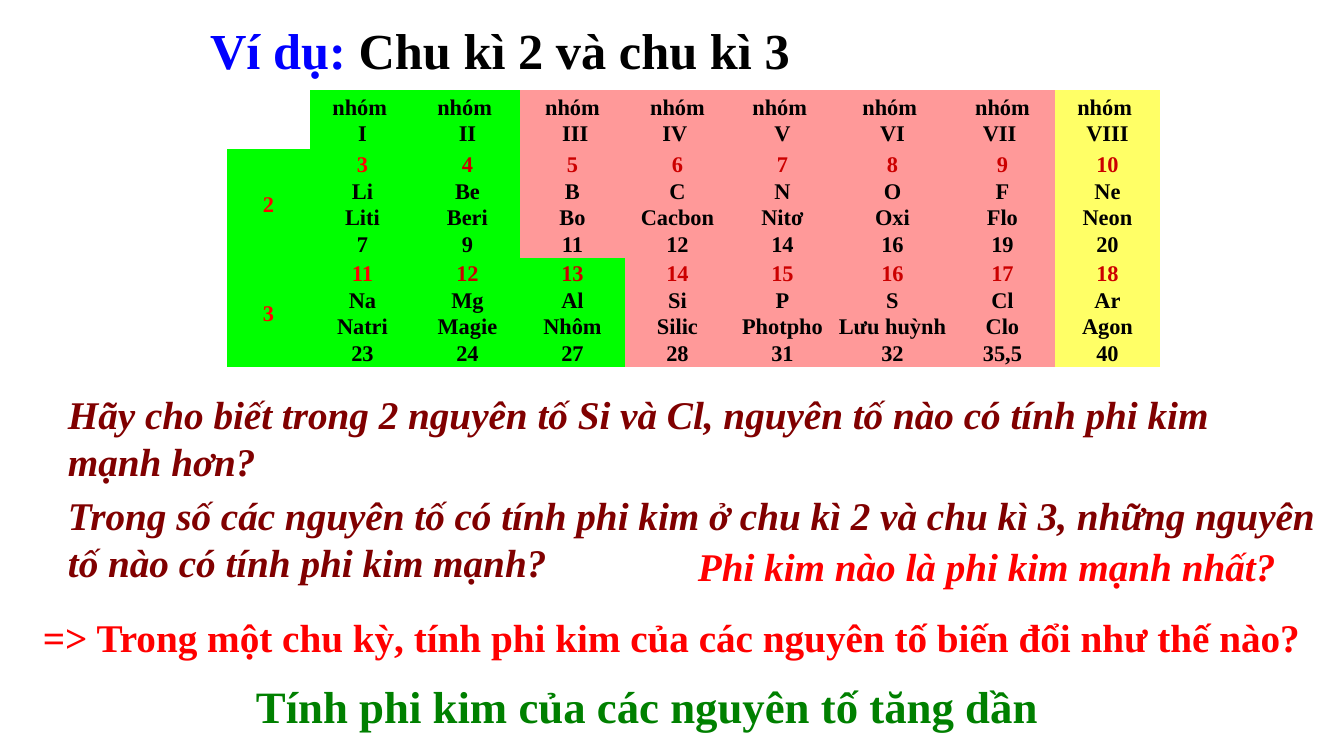
from dataclasses import dataclass
from itertools import accumulate

import pptx
import pptx.dml.color
import pptx.enum.shapes
import pptx.enum.text
import pptx.util

EMU_PER_PX = 914400 / 100.8


@dataclass(frozen=True)
class Theme:
    font: str = "Times New Roman"
    black: str = "000000"
    blue: str = "0000FF"
    red: str = "FF0000"
    dark_red: str = "CC0000"
    maroon: str = "800000"
    dark_green: str = "008000"
    metal: str = "00FF00"
    nonmetal: str = "FF9999"
    noble_gas: str = "FFFF66"
    title_pt: int = 36
    question_pt: int = 28
    answer_pt: int = 32
    cell_pt: int = 16


@dataclass(frozen=True)
class Box:
    left: int
    top: int
    width: int
    height: int


@dataclass(frozen=True)
class Statement:
    box: Box
    text: str
    color: str
    size: int
    italic: bool = False


@dataclass(frozen=True)
class Cell:
    row: int
    column: int
    text: str
    fill: str
    first_line_color: str


THEME = Theme()

# Heading and questions
HEADING_BOX = Box(200, 14, 834, 71)
HEADING_LABEL, HEADING_TOPIC = "Ví dụ: ", "Chu kì 2 và chu kì 3"
STATEMENTS = [
    Statement(Box(58, 385, 1217, 104),
              "Hãy cho biết trong 2 nguyên tố Si và Cl, nguyên tố nào có tính phi kim mạnh hơn?",
              THEME.maroon, THEME.question_pt, italic=True),
    Statement(Box(688, 537, 789, 57), "Phi kim nào là phi kim mạnh nhất?",
              THEME.red, THEME.question_pt, italic=True),
    Statement(Box(58, 486, 1268, 105),
              "Trong số các nguyên tố có tính phi kim ở chu kì 2 và chu kì 3, "
              "những nguyên tố nào có tính phi kim mạnh?",
              THEME.maroon, THEME.question_pt, italic=True),
    Statement(Box(33, 608, 1347, 57),
              "=> Trong một chu kỳ, tính phi kim của các nguyên tố biến đổi như thế nào?",
              THEME.red, THEME.question_pt),
    Statement(Box(246, 674, 920, 65), "Tính phi kim của các nguyên tố tăng dần",
              THEME.dark_green, THEME.answer_pt),
]

# Periodic grid: column 0 holds the period, row 0 the group
COLUMN_WIDTHS = [83, 105, 105, 105, 105, 105, 115, 105, 105]
ROW_HEIGHTS = [59, 109, 109]
COLUMN_LEFTS = list(accumulate(COLUMN_WIDTHS, initial=227))
ROW_TOPS = list(accumulate(ROW_HEIGHTS, initial=90))
GROUPS = ["nhóm \nI", "nhóm \nII", "nhóm\n III", "nhóm\nIV ",
          "nhóm \nV", "nhóm \nVI", "nhóm\nVII ", "nhóm \nVIII"]
FIRST_ATOMIC_NUMBER = {2: 3, 3: 11}
LAST_METAL_GROUP = {2: 2, 3: 3}
ELEMENTS = {
    2: [("Li", "Liti", "7"), ("Be", "Beri", "9"), ("B", "Bo", "11"), ("C", "Cacbon", "12"),
        ("N", "Nitơ", "14"), ("O", "Oxi", "16"), ("F", "Flo", "19"), ("Ne", "Neon", "20")],
    3: [("Na", "Natri", "23"), ("Mg", "Magie", "24"), ("Al", "Nhôm", "27"),
        ("Si", "Silic", "28"), ("P", "Photpho", "31"), ("S", "Lưu huỳnh", "32"),
        ("Cl", "Clo", "35,5"), ("Ar", "Agon", "40")],
}


def px(length: int) -> int:
    return round(length * EMU_PER_PX)


def rgb(color: str) -> pptx.dml.color.RGBColor:
    return pptx.dml.color.RGBColor.from_string(color)


def place(box: Box) -> tuple[int, int, int, int]:
    return px(box.left), px(box.top), px(box.width), px(box.height)


def format_run(run, color: str, size: int, italic: bool = False) -> None:
    run.font.name = THEME.font
    run.font.size = pptx.util.Pt(size)
    run.font.bold = True
    run.font.italic = italic
    run.font.color.rgb = rgb(color)


def group_fill(group: int, last_metal: int) -> str:
    if group <= last_metal:
        return THEME.metal
    return THEME.noble_gas if group == len(GROUPS) else THEME.nonmetal


def grid_cells() -> list[Cell]:
    cells = [Cell(0, group, label, group_fill(group, 2), THEME.black)
             for group, label in enumerate(GROUPS, start=1)]
    for row, (period, elements) in enumerate(ELEMENTS.items(), start=1):
        cells.append(Cell(row, 0, str(period), THEME.metal, THEME.red))
        for group, element in enumerate(elements, start=1):
            atomic_number = str(FIRST_ATOMIC_NUMBER[period] + group - 1)
            cells.append(Cell(row, group, "\n".join((atomic_number, *element)),
                              group_fill(group, LAST_METAL_GROUP[period]),
                              THEME.red if group == 1 else THEME.dark_red))
    return cells


def draw_heading(slide) -> None:
    heading = slide.shapes.title
    heading.left, heading.top, heading.width, heading.height = place(HEADING_BOX)
    frame = heading.text_frame
    frame.text = HEADING_LABEL
    frame.word_wrap = True
    frame.auto_size = pptx.enum.text.MSO_AUTO_SIZE.NONE
    frame.vertical_anchor = pptx.enum.text.MSO_ANCHOR.TOP
    line = frame.paragraphs[0]
    line.alignment = pptx.enum.text.PP_ALIGN.LEFT
    line.add_run().text = HEADING_TOPIC
    for run, color in zip(line.runs, (THEME.blue, THEME.black)):
        format_run(run, color, THEME.title_pt)


def draw_cell(slide, cell: Cell) -> None:
    box = Box(COLUMN_LEFTS[cell.column], ROW_TOPS[cell.row],
              COLUMN_WIDTHS[cell.column], ROW_HEIGHTS[cell.row])
    tile = slide.shapes.add_shape(
        pptx.enum.shapes.MSO_SHAPE.ACTION_BUTTON_CUSTOM, *place(box))
    tile.shadow.inherit = False
    tile.fill.solid()
    tile.fill.fore_color.rgb = rgb(cell.fill)
    tile.line.fill.background()
    frame = tile.text_frame
    frame.text = cell.text
    frame.word_wrap = False
    frame.vertical_anchor = pptx.enum.text.MSO_ANCHOR.MIDDLE
    for index, line in enumerate(frame.paragraphs):
        line.alignment = pptx.enum.text.PP_ALIGN.CENTER
        color = THEME.black if index else cell.first_line_color
        format_run(line.runs[0], color, THEME.cell_pt)


def draw_statement(slide, statement: Statement) -> None:
    frame = slide.shapes.add_textbox(*place(statement.box)).text_frame
    frame.text = statement.text
    frame.word_wrap = True
    format_run(frame.paragraphs[0].runs[0], statement.color, statement.size, statement.italic)


def main() -> None:
    deck = pptx.Presentation()
    deck.slide_width, deck.slide_height = px(1344), px(756)
    title_only = deck.slide_layouts[5]
    slide = deck.slides.add_slide(title_only)
    draw_heading(slide)
    for cell in grid_cells():
        draw_cell(slide, cell)
    for statement in STATEMENTS:
        draw_statement(slide, statement)
    deck.save("out.pptx")


if __name__ == "__main__":
    main()
